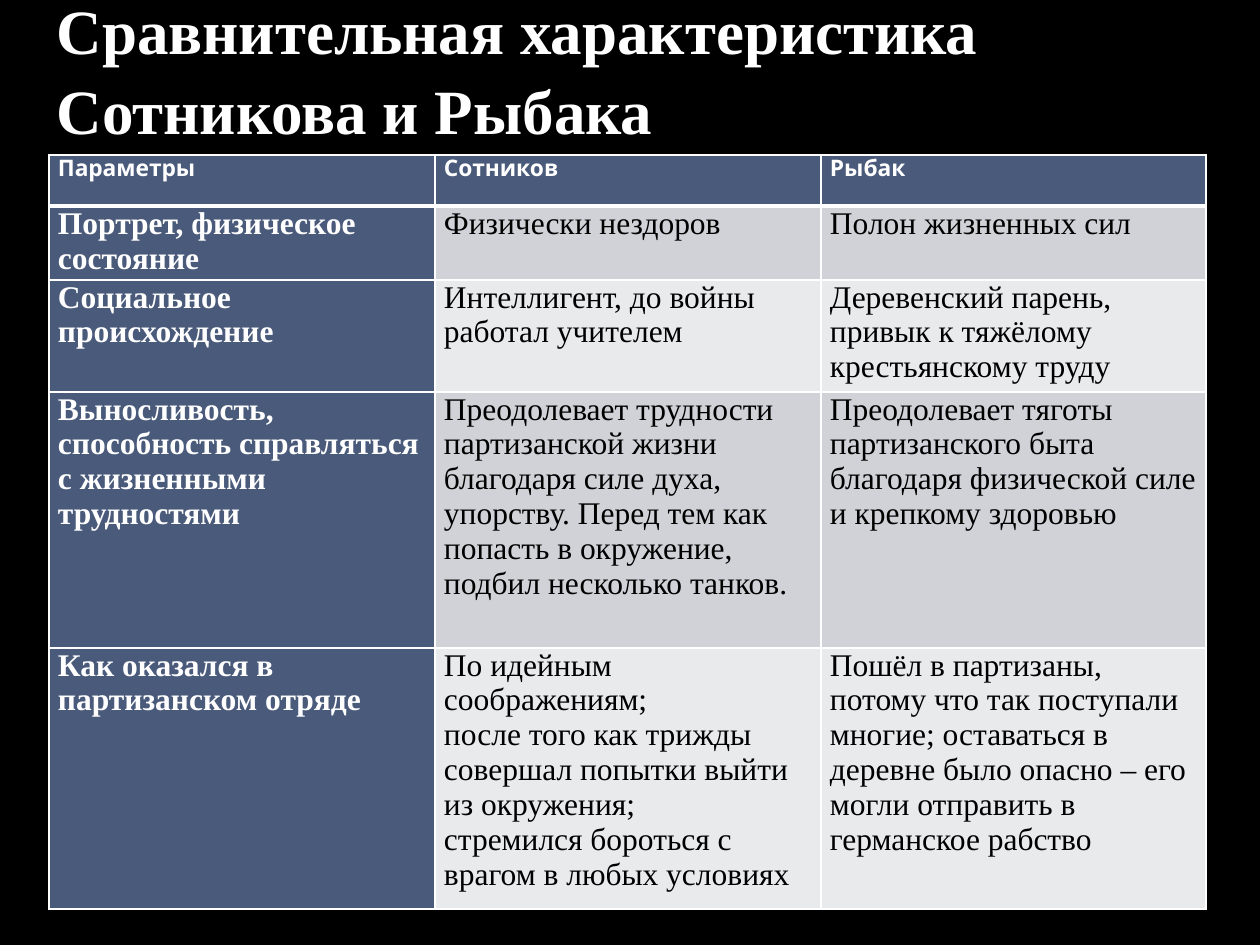
from lxml.etree import SubElement
from pptx import Presentation
from pptx.dml.color import RGBColor
from pptx.enum.text import MSO_ANCHOR, MSO_AUTO_SIZE, PP_ALIGN
from pptx.oxml.ns import qn
from pptx.util import Pt

EMU_PER_PX = 914400 / 126
COLORS = {
    "background": "000000",
    "light_text": "FFFFFF",
    "dark_text": "000000",
    "border": "FFFFFF",
    "header": "4A5A7A",
    "odd_row": "D0D2D7",
    "even_row": "E9EAEC",
}
SERIF = "Times New Roman"
SANS = "Cabin"

COLUMN_WIDTHS = [386, 386, 385]
ROW_HEIGHTS = [51, 74, 112, 256, 261]
ROWS = [
    ["Параметры", "Сотников", "Рыбак"],
    ["Портрет, физическое состояние", "Физически нездоров", "Полон жизненных сил"],
    [
        "Социальное происхождение",
        "Интеллигент, до войны работал учителем",
        "Деревенский парень, привык к тяжёлому крестьянскому труду",
    ],
    [
        "Выносливость, способность справляться с жизненными трудностями",
        "Преодолевает трудности партизанской жизни благодаря силе духа, упорству. "
        "Перед тем как попасть в окружение, подбил несколько танков.",
        "Преодолевает тяготы партизанского быта благодаря физической силе "
        "и крепкому здоровью",
    ],
    [
        "Как оказался в партизанском отряде",
        "По идейным соображениям;\n"
        "после того как трижды совершал попытки выйти из окружения;\n"
        "стремился бороться с врагом в любых условиях",
        "Пошёл в партизаны, потому что так поступали многие; оставаться в деревне "
        "было опасно – его могли отправить в германское рабство",
    ],
]


def px(n):
    return round(n * EMU_PER_PX)


def rgb(name):
    return RGBColor.from_string(COLORS[name])


class SlideBuilder:
    def __init__(self, prs):
        self.s = prs.slides.add_slide(prs.slide_layouts[5])
        fill = self.s.background.fill
        fill.solid()
        fill.fore_color.rgb = rgb("background")

    def style(self, p, size, font, color, bold):
        p.font.size = Pt(size)
        p.font.name = font
        p.font.bold = bold
        p.font.color.rgb = rgb(color)

    def title(self, text, x, y, w, h):
        sp = self.s.shapes.title
        sp.left, sp.top, sp.width, sp.height = map(px, (x, y, w, h))
        tf = sp.text_frame
        tf.text = text
        tf.word_wrap = True
        tf.auto_size = MSO_AUTO_SIZE.NONE
        tf.vertical_anchor = MSO_ANCHOR.BOTTOM
        tf.margin_top = tf.margin_bottom = 0
        p = tf.paragraphs[0]
        p.alignment = PP_ALIGN.LEFT
        p.line_spacing = 1.05
        self.style(p, 36, SERIF, "light_text", True)

    def borders(self, cell, top, bottom):
        """Draw all four cell borders, 1 pt wide at the sides."""
        tc_pr = cell._tc.get_or_add_tcPr()
        widths = {"a:lnL": 1, "a:lnR": 1, "a:lnT": top, "a:lnB": bottom}
        for i, (tag, width) in enumerate(widths.items()):
            ln = SubElement(tc_pr, qn(tag), w=str(Pt(width)))
            tc_pr.insert(i, ln)
            fill = SubElement(ln, qn("a:solidFill"))
            SubElement(fill, qn("a:srgbClr"), val=COLORS["border"])

    def cell(self, cell, text, row, col):
        header = row == 0
        label = header or col == 0
        cell.text = text
        cell.margin_left = cell.margin_right = px(9)
        cell.margin_top = cell.margin_bottom = 0
        cell.fill.solid()
        band = "odd_row" if row % 2 else "even_row"
        cell.fill.fore_color.rgb = rgb("header" if label else band)
        for p in cell.text_frame.paragraphs:
            self.style(p, 13 if header else 18, SANS if header else SERIF,
                       "light_text" if label else "dark_text", label)
        self.borders(cell, 3 if row == 1 else 1, 3 if header else 1)

    def table(self, rows, x, y, widths, heights):
        frame = self.s.shapes.add_table(len(rows), len(widths), px(x), px(y),
                                        px(sum(widths)), px(sum(heights)))
        table = frame.table
        for column, width in zip(table.columns, widths):
            column.width = px(width)
        for r, (values, height) in enumerate(zip(rows, heights)):
            table.rows[r].height = px(height)
            for c, text in enumerate(values):
                self.cell(table.cell(r, c), text, r, c)


def main():
    prs = Presentation()
    prs.slide_width, prs.slide_height = px(1260), px(945)
    slide = SlideBuilder(prs)
    slide.title("Сравнительная характеристика Сотникова и Рыбака", 44, 0, 1058, 147)
    slide.table(ROWS, 49, 155, COLUMN_WIDTHS, ROW_HEIGHTS)
    prs.save("out.pptx")


if __name__ == "__main__":
    main()
